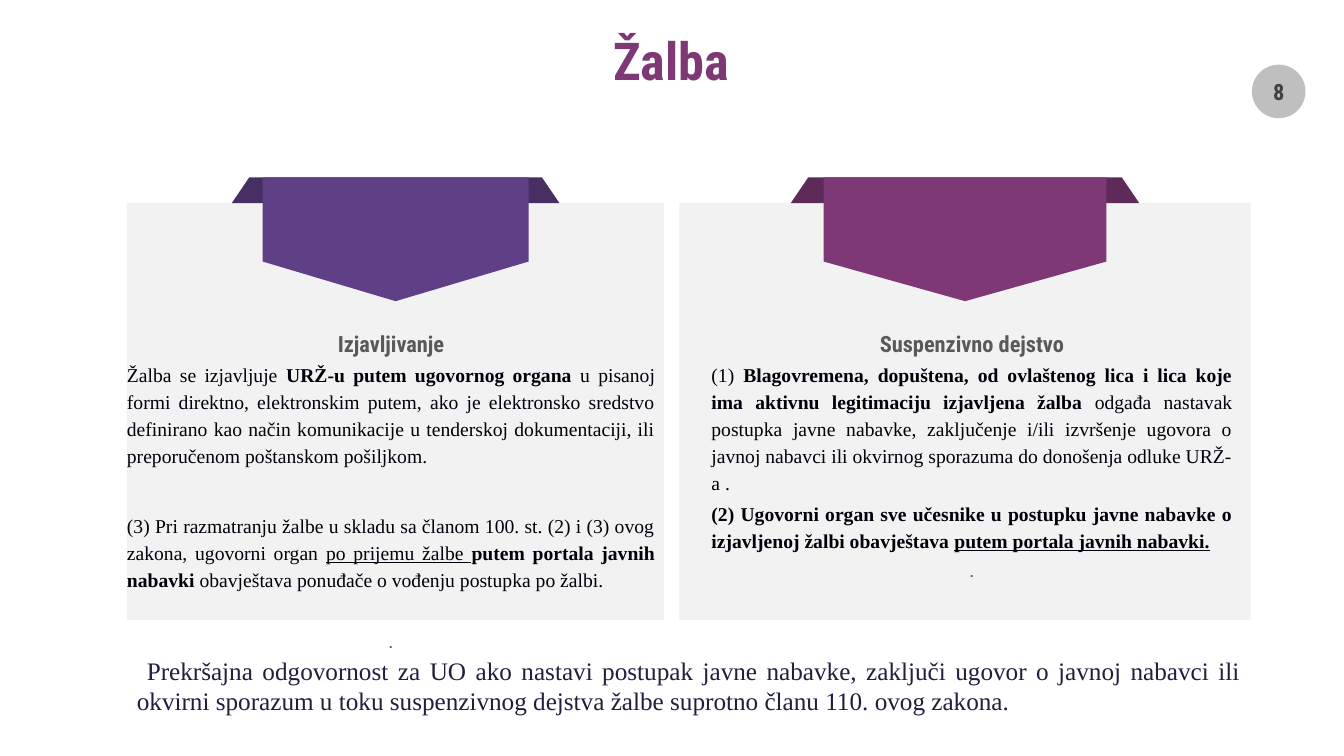
import pptx
import pptx.util
import pptx.dml.color
import pptx.enum.shapes
import pptx.enum.text

Cm, Pt = pptx.util.Cm, pptx.util.Pt
Kind = pptx.enum.shapes.MSO_SHAPE
Align = pptx.enum.text.PP_ALIGN
Anchor = pptx.enum.text.MSO_ANCHOR
HEAD, BODY = "Roboto Condensed", "Times New Roman"

deck = pptx.Presentation()
deck.slide_width, deck.slide_height = Cm(33.87), Cm(19.05)
slide = deck.slides.add_slide(deck.slide_layouts[6])


def draw(kind, left, top, width, height, color):
    shape = slide.shapes.add_shape(kind, Cm(left), Cm(top), Cm(width), Cm(height))
    shape.shadow.inherit = False
    shape.fill.solid()
    shape.fill.fore_color.rgb = pptx.dml.color.RGBColor.from_string(color)
    shape.line.fill.background()
    return shape


def write(par, text, size, face, color, style=""):
    run = par.add_run()
    run.text = text
    font = run.font
    font.size, font.name = Pt(size), face
    font.color.rgb = pptx.dml.color.RGBColor.from_string(color)
    font.bold = "b" in style
    font.underline = "u" in style


# Page number
badge = draw(Kind.OVAL, 31.55, 1.63, 1.35, 1.35, "BFBFBF")
frame = badge.text_frame
frame.margin_left = frame.margin_right = frame.margin_top = frame.margin_bottom = 0
frame.vertical_anchor = Anchor.MIDDLE
frame.paragraphs[0].alignment = Align.CENTER
write(frame.paragraphs[0], "8", 16, HEAD, "404040", "b")

# Title
title = slide.shapes.add_textbox(Cm(8.1), Cm(0.74), Cm(17.63), Cm(1.55))
frame = title.text_frame
frame.margin_left = frame.margin_right = frame.margin_top = frame.margin_bottom = 0
frame.word_wrap = False
frame.vertical_anchor = Anchor.MIDDLE
frame.paragraphs[0].alignment = Align.CENTER
write(frame.paragraphs[0], "Žalba", 37.3, HEAD, "7E3875", "b")

# Panels: left, width, fold colour, ribbon colour, text left, width, height,
# heading, body as (space before, runs), space before the closing dot
panels = [
    (3.2, 13.54, "472F64", "5F3F85", 3.2, 13.31, 8.05, "Izjavljivanje", [
        (1.4, [
            ("Žalba se izjavljuje ", ""),
            ("URŽ-u putem ugovornog organa", "b"),
            (" u pisanoj formi direktno, elektronskim putem, ako je elektronsko "
             "sredstvo definirano kao način komunikacije u tenderskoj "
             "dokumentaciji, ili preporučenom poštanskom pošiljkom.", "")]),
        (29.3, [
            ("(3) Pri razmatranju žalbe u skladu sa članom 100. st. (2) i (3) "
             "ovog zakona, ugovorni organ ", ""),
            ("po prijemu žalbe ", "u"),
            ("putem portala javnih nabavki ", "b"),
            ("obavještava ponuđače o vođenju postupka po žalbi.", "")]),
    ], 25),
    (17.12, 14.4, "5E2A58", "7E3875", 17.93, 13.13, 6.35, "Suspenzivno dejstvo", [
        (1.4, [
            ("(1) ", ""),
            ("Blagovremena, dopuštena, od ovlaštenog lica i lica koje ima "
             "aktivnu legitimaciju izjavljena žalba ", "b"),
            ("odgađa nastavak postupka javne nabavke, zaključenje i/ili "
             "izvršenje ugovora o javnoj nabavci ili okvirnog sporazuma do "
             "donošenja odluke URŽ-a .", "")]),
        (1.4, [
            ("(2) Ugovorni organ sve učesnike u postupku javne nabavke o "
             "izjavljenoj žalbi obavještava ", "b"),
            ("putem portala javnih nabavki.", "bu")]),
    ], 2.8),
]

for left, width, fold, hue, start, span, tall, head, body, gap in panels:
    # Card with a folded ribbon centred on its top edge
    mid = left + width / 2
    draw(Kind.RECTANGLE, left, 5.11, width, 10.52, "F2F2F2")
    wide = 0.61 * width
    back = draw(Kind.TRAPEZOID, mid - wide / 2, 4.47, wide, 0.65, fold)
    back.adjustments[0] = 0.68
    wide, drop = 0.495 * width, 3.12
    flag = draw(Kind.PENTAGON, mid - drop / 2, 4.47 + (drop - wide) / 2, drop, wide, hue)
    flag.adjustments[0] = 0.32
    flag.rotation = 90

    # Heading
    box = slide.shapes.add_textbox(Cm(start), Cm(8.33), Cm(span), Cm(tall))
    frame = box.text_frame
    frame.word_wrap = True
    frame.margin_left = frame.margin_right = frame.margin_top = frame.margin_bottom = 0
    par = frame.paragraphs[0]
    par.alignment = Align.CENTER
    write(par, head, 16, HEAD, "595959", "b")

    # Body
    for before, runs in body:
        par = frame.add_paragraph()
        par.alignment = Align.JUSTIFY
        par.line_spacing = 1.15
        par.space_before, par.space_after = Pt(before), Pt(1.4)
        for text, style in runs:
            write(par, text, 14, BODY, "00000A", style)

    # Closing dot
    par = frame.add_paragraph()
    par.alignment = Align.CENTER
    par.space_before = Pt(gap)
    write(par, ".", 14, HEAD, "595959")

# Footer, with a small first-line indent
foot = slide.shapes.add_textbox(Cm(3.2), Cm(16.38), Cm(28.32), Cm(1.8))
foot.text_frame.word_wrap = True
par = foot.text_frame.paragraphs[0]
par.alignment = Align.JUSTIFY
par._p.get_or_add_pPr().set("indent", str(Cm(0.25)))
write(par, "Prekršajna odgovornost za UO ako nastavi postupak javne nabavke, "
      "zaključi ugovor o javnoj nabavci ili okvirni sporazum u toku suspenzivnog "
      "dejstva žalbe suprotno članu 110. ovog zakona.", 18, BODY, "261C3D")

deck.save("out.pptx")
